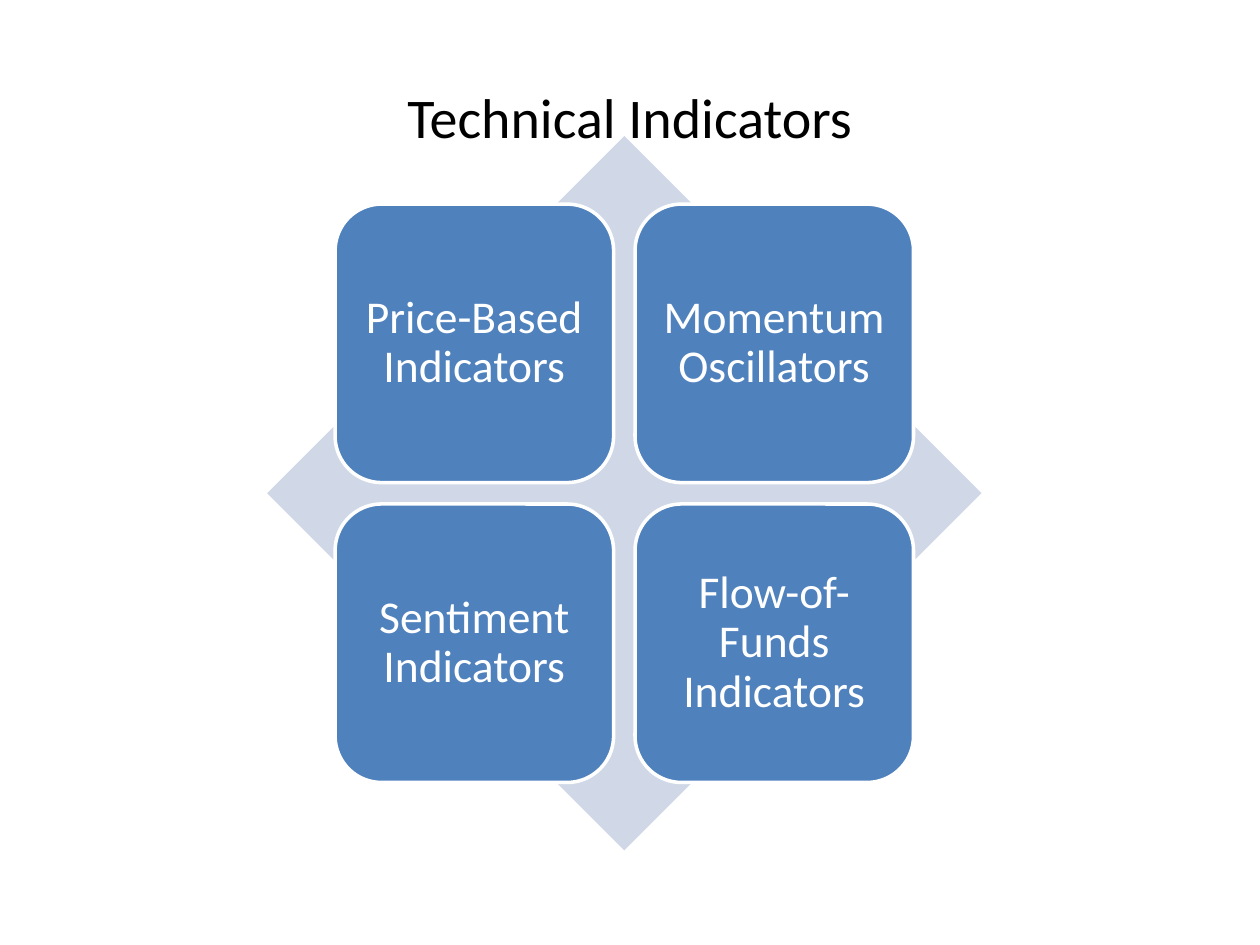
from dataclasses import dataclass

from pptx import Presentation
from pptx.dml.color import RGBColor
from pptx.enum.shapes import MSO_SHAPE
from pptx.enum.text import MSO_ANCHOR, PP_ALIGN
from pptx.shapes.autoshape import Shape
from pptx.slide import Slide
from pptx.util import Inches, Pt

COLOURS = {"title": "000000", "diamond": "D0D8E8", "tile": "4F81BD", "white": "FFFFFF"}
FONT = "Calibri"
GRID_LEFT, GRID_TOP = 2.66, 1.62
TILE_SIZE, TILE_PITCH = 2.21, 2.38
TILE_INSET = 0.11


@dataclass(frozen=True)
class Tile:
    label: str
    column: int
    row: int


TILES = [
    Tile("Price-Based Indicators", 0, 0),
    Tile("Momentum Oscillators", 1, 0),
    Tile("Sentiment Indicators", 0, 1),
    Tile("Flow-of-Funds Indicators", 1, 1),
]


def colour(name: str) -> RGBColor:
    return RGBColor.from_string(COLOURS[name])


def write_text(box: Shape, text: str, size: int, colour_name: str) -> None:
    frame = box.text_frame
    frame.word_wrap = True
    frame.vertical_anchor = MSO_ANCHOR.MIDDLE
    frame.text = text
    para = frame.paragraphs[0]
    para.alignment = PP_ALIGN.CENTER
    span = para.runs[0]
    span.font.name = FONT
    span.font.size = Pt(size)
    span.font.color.rgb = colour(colour_name)


def draw_title(page: Slide, text: str) -> None:
    box = page.shapes.add_textbox(Inches(0.5), Inches(0.3), Inches(9), Inches(1.25))
    write_text(box, text, 32, "title")


def draw_diamond(page: Slide) -> None:
    diamond = page.shapes.add_shape(
        MSO_SHAPE.DIAMOND, Inches(2.12), Inches(1.08), Inches(5.67), Inches(5.67)
    )
    diamond.shadow.inherit = False
    diamond.fill.solid()
    diamond.fill.fore_color.rgb = colour("diamond")
    diamond.line.fill.background()


def draw_tile(page: Slide, tile: Tile) -> None:
    box = page.shapes.add_shape(
        MSO_SHAPE.ROUNDED_RECTANGLE,
        Inches(GRID_LEFT + tile.column * TILE_PITCH),
        Inches(GRID_TOP + tile.row * TILE_PITCH),
        Inches(TILE_SIZE),
        Inches(TILE_SIZE),
    )
    box.shadow.inherit = False
    box.fill.solid()
    box.fill.fore_color.rgb = colour("tile")
    box.line.color.rgb = colour("white")
    box.line.width = Pt(2)
    write_text(box, tile.label, 26, "white")
    frame = box.text_frame
    frame.margin_left = frame.margin_right = Inches(TILE_INSET)
    frame.margin_top = frame.margin_bottom = Inches(TILE_INSET)
    frame.paragraphs[0].line_spacing = 0.9


def main() -> None:
    deck = Presentation()
    deck.slide_width = Inches(10)
    deck.slide_height = Inches(7.5)
    page = deck.slides.add_slide(deck.slide_layouts[6])
    draw_title(page, "Technical Indicators")
    draw_diamond(page)
    for tile in TILES:
        draw_tile(page, tile)
    deck.save("out.pptx")


if __name__ == "__main__":
    main()
